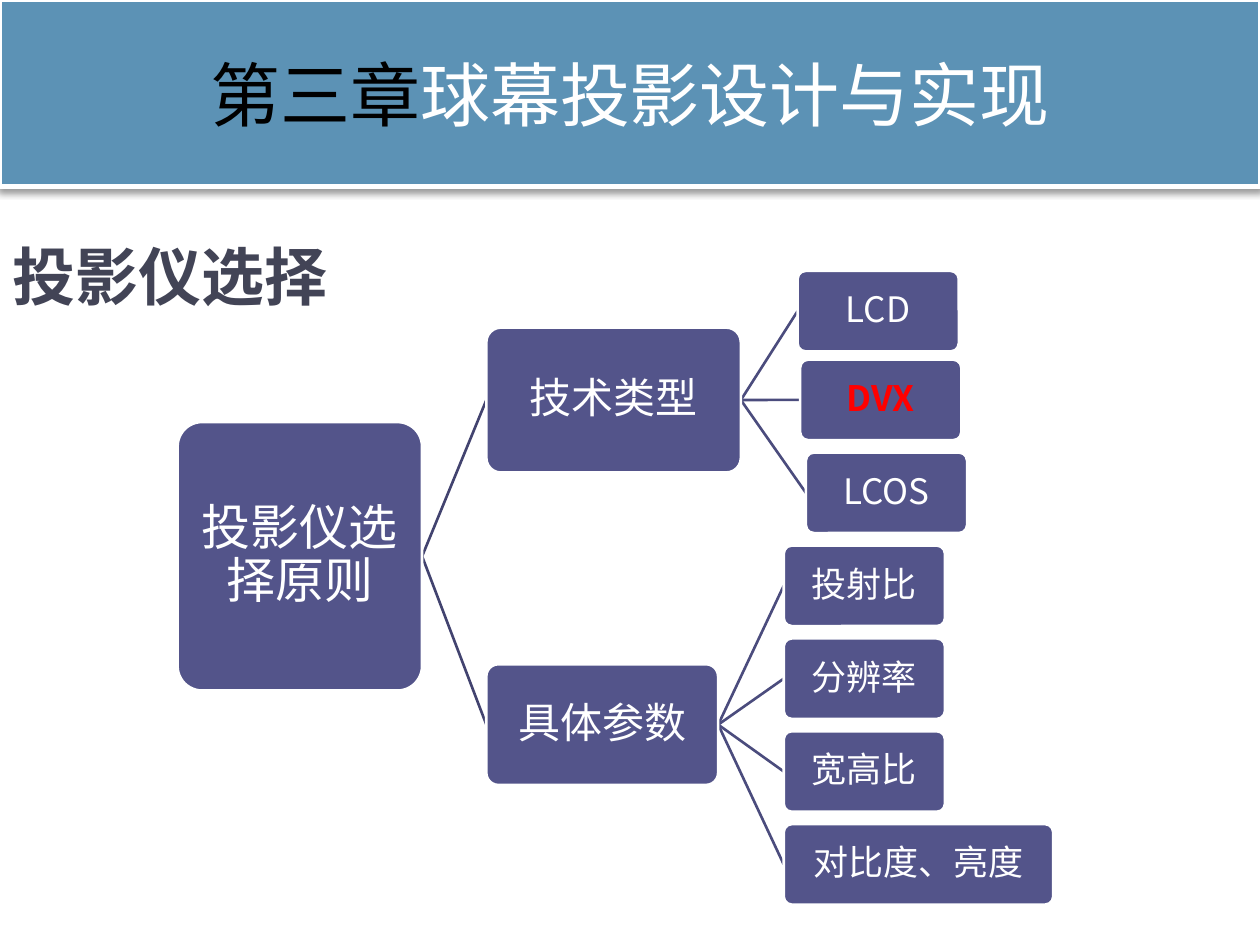
from dataclasses import dataclass

from lxml import etree
from pptx import Presentation
from pptx.dml.color import RGBColor
from pptx.enum.shapes import MSO_CONNECTOR, MSO_SHAPE
from pptx.enum.text import MSO_ANCHOR, PP_ALIGN
from pptx.oxml.ns import qn
from pptx.util import Pt

RECT, ROUND = MSO_SHAPE.RECTANGLE, MSO_SHAPE.ROUNDED_RECTANGLE
STRAIGHT = MSO_CONNECTOR.STRAIGHT
MIDDLE, CENTER, LEFT = MSO_ANCHOR.MIDDLE, PP_ALIGN.CENTER, PP_ALIGN.LEFT

WHITE = RGBColor(0xFF, 0xFF, 0xFF)
BLACK = RGBColor(0x00, 0x00, 0x00)
RED = RGBColor(0xFF, 0x00, 0x00)
BANNER = RGBColor(0x5C, 0x92, 0xB5)
HEADING = RGBColor(0x42, 0x44, 0x56)
NODE = RGBColor(0x53, 0x54, 0x8A)
ROOT_EDGE = RGBColor(0x42, 0x43, 0x6F)
LEAF_EDGE = RGBColor(0x4B, 0x4C, 0x7D)

CJK = "Noto Sans CJK SC"
LEAF_W, LEAF_H = 92.16, 46
LEAF_X, LEAF_TOP, LEAF_STEP = 447.84, 311.76, 53.05


@dataclass
class Node:
    text: str
    x: float
    y: float
    w: float = LEAF_W
    h: float = LEAF_H
    size: float = 20
    inset: float = 0.9
    color: RGBColor = WHITE
    bold: bool = False
    edge: RGBColor = LEAF_EDGE
    children: tuple["Node", ...] = ()

    @property
    def mid(self) -> float:
        return self.y + self.h / 2


def style(p, size: float, align, name: str = CJK, color: RGBColor = WHITE,
          bold: bool = False) -> None:
    p.alignment = align
    p.font.size, p.font.name, p.font.bold = Pt(size), name, bold
    p.font.color.rgb = color


def add_box(s, kind, x: float, y: float, w: float, h: float,
            fill: RGBColor, line_width: float):
    sp = s.shapes.add_shape(kind, Pt(x), Pt(y), Pt(w), Pt(h))
    sp.shadow.inherit = False
    sp.fill.solid()
    sp.fill.fore_color.rgb = fill
    sp.line.color.rgb = WHITE
    sp.line.width = Pt(line_width)
    sp.text_frame.word_wrap = True
    sp.text_frame.vertical_anchor = MIDDLE
    return sp


def add_edge(s, parent: Node, child: Node) -> None:
    line = s.shapes.add_connector(STRAIGHT, Pt(parent.x + parent.w), Pt(parent.mid),
                                  Pt(child.x), Pt(child.mid))
    line.line.color.rgb = parent.edge
    line.line.width = Pt(1.5)
    etree.SubElement(line._element.spPr, qn("a:effectLst"))


def add_tree(s, node: Node) -> None:
    for child in node.children:
        add_edge(s, node, child)
        add_tree(s, child)
    sp = add_box(s, ROUND, node.x, node.y, node.w, node.h, NODE, 1.5)
    sp.adjustments[0] = 0.1
    tf = sp.text_frame
    tf.margin_left = tf.margin_right = tf.margin_top = tf.margin_bottom = Pt(node.inset)
    p = tf.paragraphs[0]
    p.text = node.text
    p.line_spacing = 0.9
    style(p, node.size, CENTER, color=node.color, bold=node.bold)


def add_shadow(sp) -> None:
    effects = sp._element.spPr.find(qn("a:effectLst"))
    shadow = etree.SubElement(effects, qn("a:outerShdw"), blurRad=str(Pt(4.1)),
                              dist=str(Pt(2)), dir="5400000", rotWithShape="0")
    color = etree.SubElement(shadow, qn("a:srgbClr"), val=str(BLACK))
    etree.SubElement(color, qn("a:alpha"), val="40000")


def add_heading(s) -> None:
    tf = s.shapes.add_textbox(Pt(0), Pt(118), Pt(636.5), Pt(78.5)).text_frame
    tf.word_wrap = True
    tf.vertical_anchor = MIDDLE
    p = tf.paragraphs[0]
    p.text = "投影仪选择"
    style(p, 36, LEFT, "Arial", HEADING, True)


def add_banner(s) -> None:
    sp = add_box(s, RECT, 0, 0, 720, 106.5, BANNER, 2.5)
    add_shadow(sp)
    p = sp.text_frame.paragraphs[0]
    style(p, 40, CENTER)
    for text, color in (("第三章", BLACK), ("球幕投影设计与实现", WHITE)):
        r = p.add_run()
        r.text = text
        r.font.color.rgb = color


# Selection tree: technology types and specific parameters
TYPES = Node("技术类型", 277.92, 187.2, 145.44, 82.8, 24, 1.2, children=(
    Node("LCD", 455.76, 154.8),
    Node("DVX", 457.2, 205.5, color=RED, bold=True),
    Node("LCOS", 460.5, 258.6),
))
PARAMETERS = Node("具体参数", 277.92, 379.6, 132.48, 69, 24, 1.2, children=tuple(
    Node(text, LEAF_X, LEAF_TOP + i * LEAF_STEP, w)
    for i, (text, w) in enumerate((("投射比", LEAF_W), ("分辨率", LEAF_W),
                                   ("宽高比", LEAF_W), ("对比度、亮度", 154)))
))
ROOT = Node("投影仪选择原则", 101.5, 241.2, 139.7, 153.4, 28, 1.4,
            edge=ROOT_EDGE, children=(TYPES, PARAMETERS))


def main() -> None:
    prs = Presentation()
    prs.slide_width, prs.slide_height = Pt(720), Pt(540)
    s = prs.slides.add_slide(prs.slide_layouts[6])
    add_heading(s)
    add_tree(s, ROOT)
    add_banner(s)
    prs.save("out.pptx")


if __name__ == "__main__":
    main()
